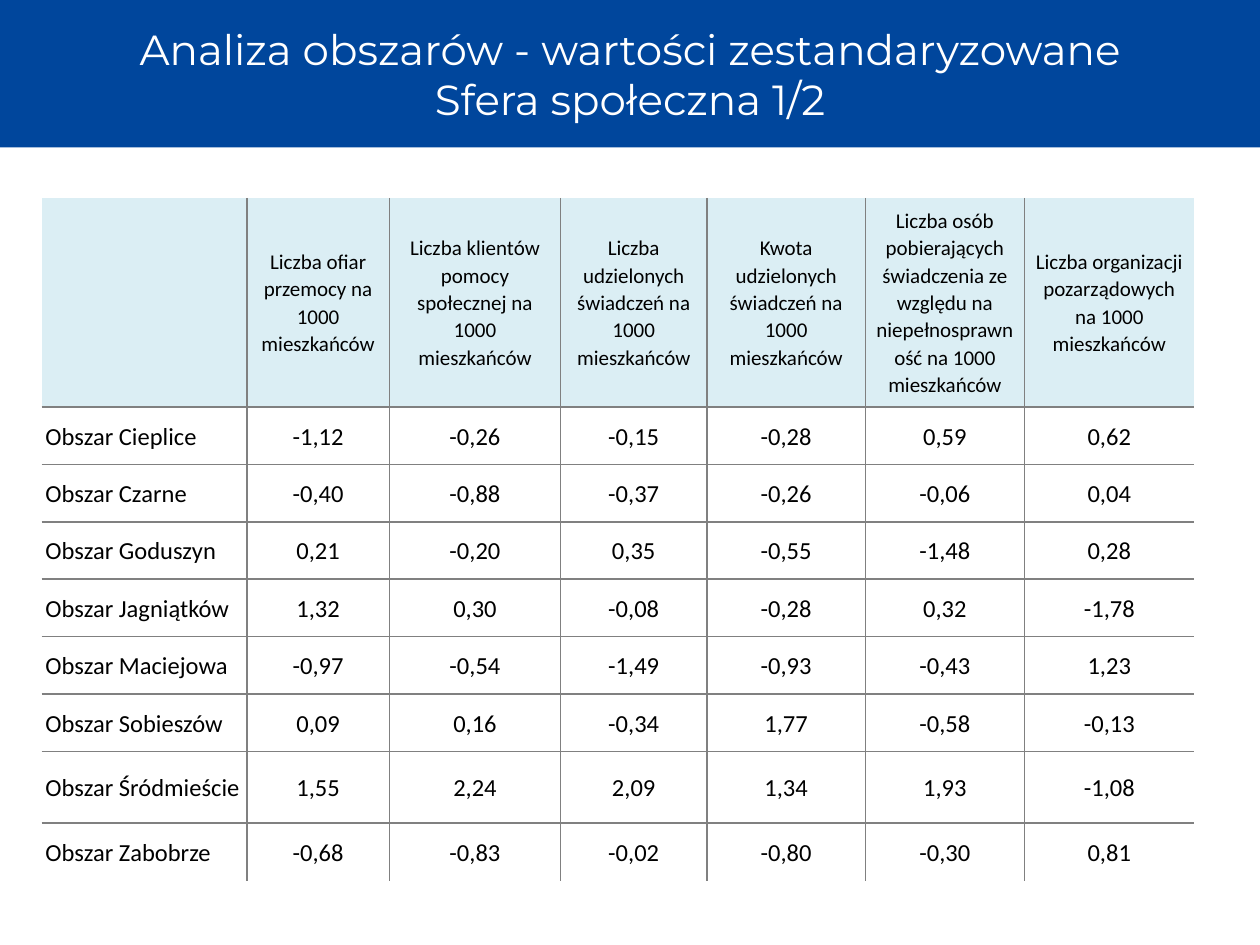
import dataclasses
import typing

import lxml.etree
import pptx
import pptx.dml.color
import pptx.enum.text
import pptx.oxml.ns
import pptx.util

Inches = pptx.util.Inches
Pt = pptx.util.Pt
RGB = pptx.dml.color.RGBColor
ALIGN = pptx.enum.text.PP_ALIGN
MIDDLE = pptx.enum.text.MSO_ANCHOR.MIDDLE


@dataclasses.dataclass(frozen=True)
class Theme:
    banner: str = "00469C"
    header: str = "DBEEF4"
    body: str = "FFFFFF"
    title_text: str = "FFFFFF"
    text: str = "000000"
    grid: str = "808080"
    title_font: str = "Montserrat"
    font: str = "Calibri"
    title_size: int = 24
    header_size: int = 12
    body_size: int = 14
    grid_width: int = 1
    line_spacing: float = 1.07


@dataclasses.dataclass(frozen=True)
class Area:
    name: str
    values: str

    def texts(self) -> list[str]:
        return [f"Obszar {self.name}", *self.values.split()]


@dataclasses.dataclass(frozen=True)
class CellStyle:
    size: int
    fill: str | None
    align: typing.Any = ALIGN.CENTER
    inset: float = 0.05


THEME = Theme()
HEADER = CellStyle(THEME.header_size, THEME.header)
LABEL = CellStyle(THEME.body_size, None, ALIGN.LEFT, 0.03)
VALUE = CellStyle(THEME.body_size, THEME.body)

TITLE = ("Analiza obszarów - wartości zestandaryzowane", "Sfera społeczna 1/2")
INDICATORS = (
    "Liczba ofiar przemocy",
    "Liczba klientów pomocy społecznej",
    "Liczba udzielonych świadczeń",
    "Kwota udzielonych świadczeń",
    "Liczba osób pobierających świadczenia ze względu na niepełnosprawność",
    "Liczba organizacji pozarządowych",
)
AREAS = (
    Area("Cieplice", "-1,12 -0,26 -0,15 -0,28 0,59 0,62"),
    Area("Czarne", "-0,40 -0,88 -0,37 -0,26 -0,06 0,04"),
    Area("Goduszyn", "0,21 -0,20 0,35 -0,55 -1,48 0,28"),
    Area("Jagniątków", "1,32 0,30 -0,08 -0,28 0,32 -1,78"),
    Area("Maciejowa", "-0,97 -0,54 -1,49 -0,93 -0,43 1,23"),
    Area("Sobieszów", "0,09 0,16 -0,34 1,77 -0,58 -0,13"),
    Area("Śródmieście", "1,55 2,24 2,09 1,34 1,93 -1,08"),
    Area("Zabobrze", "-0,68 -0,83 -0,02 -0,80 -0,30 0,81"),
)
COL_WIDTHS = (1.63, 1.13, 1.36, 1.16, 1.26, 1.26, 1.35)
TABLE_HEIGHT = 5.42
HEADER_HEIGHT = 1.66
TALL_ROWS = {"Śródmieście": 0.57}


def set_attrs(target: typing.Any, values: dict[str, typing.Any]) -> None:
    for name, value in values.items():
        setattr(target, name, value)


def add_run(p: typing.Any, text: str, font: str, size: int, color: str) -> None:
    r = p.add_run()
    r.text = text
    set_attrs(r.font, {"name": font, "size": Pt(size), "bold": False})
    r.font.color.rgb = RGB.from_string(color)


def draw_title(sp: typing.Any) -> None:
    set_attrs(sp, {"left": 0, "top": 0, "width": Inches(10), "height": Inches(1.17)})
    sp.fill.solid()
    sp.fill.fore_color.rgb = RGB.from_string(THEME.banner)
    tf = sp.text_frame
    set_attrs(tf, {"word_wrap": True, "vertical_anchor": MIDDLE,
                   "auto_size": pptx.enum.text.MSO_AUTO_SIZE.NONE})
    p = tf.paragraphs[0]
    p.alignment = ALIGN.CENTER
    for i, line in enumerate(TITLE):
        if i:
            p.add_line_break()
        add_run(p, line, THEME.title_font, THEME.title_size, THEME.title_text)


def draw_borders(cell: typing.Any, sides: dict[str, bool]) -> None:
    qn = pptx.oxml.ns.qn
    props = cell._tc.get_or_add_tcPr()
    for side, shown in sides.items():
        ln = lxml.etree.SubElement(props, qn(f"a:ln{side}"), w=str(Pt(THEME.grid_width)))
        if shown:
            fill = lxml.etree.SubElement(ln, qn("a:solidFill"))
            lxml.etree.SubElement(fill, qn("a:srgbClr"), val=THEME.grid)
        else:
            lxml.etree.SubElement(ln, qn("a:noFill"))


def draw_cell(cell: typing.Any, text: str, style: CellStyle, sides: dict[str, bool]) -> None:
    draw_borders(cell, sides)
    if style.fill:
        cell.fill.solid()
        cell.fill.fore_color.rgb = RGB.from_string(style.fill)
    else:
        cell.fill.background()
    set_attrs(cell, {"vertical_anchor": MIDDLE, "margin_left": Inches(style.inset),
                     "margin_right": Inches(style.inset), "margin_top": 0, "margin_bottom": 0})
    p = cell.text_frame.paragraphs[0]
    set_attrs(p, {"alignment": style.align, "line_spacing": THEME.line_spacing})
    if text:
        add_run(p, text, THEME.font, style.size, THEME.text)


def draw_table(s: typing.Any) -> None:
    rows = [["", *(f"{name} na 1000 mieszkańców" for name in INDICATORS)]]
    rows += [area.texts() for area in AREAS]
    last_row, last_col = len(rows) - 1, len(COL_WIDTHS) - 1
    frame = s.shapes.add_table(len(rows), len(COL_WIDTHS), Inches(0.33), Inches(1.57),
                               Inches(sum(COL_WIDTHS)), Inches(TABLE_HEIGHT))
    table = frame.table
    set_attrs(table, {"first_row": False, "horz_banding": False})
    for col, width in zip(table.columns, COL_WIDTHS):
        col.width = Inches(width)
    spare = TABLE_HEIGHT - HEADER_HEIGHT - sum(TALL_ROWS.values())
    row_height = spare / (len(AREAS) - len(TALL_ROWS))
    heights = [HEADER_HEIGHT, *(TALL_ROWS.get(area.name, row_height) for area in AREAS)]
    for i, (texts, height) in enumerate(zip(rows, heights)):
        table.rows[i].height = Inches(height)
        for j, text in enumerate(texts):
            style = HEADER if i == 0 else LABEL if j == 0 else VALUE
            sides = {"L": j > 0, "R": j < last_col, "T": i > 0, "B": i < last_row}
            draw_cell(table.cell(i, j), text, style, sides)


def main() -> None:
    prs = pptx.Presentation()
    set_attrs(prs, {"slide_width": Inches(10), "slide_height": Inches(7.5)})
    s = prs.slides.add_slide(prs.slide_layouts[5])
    draw_title(s.shapes.title)
    draw_table(s)
    prs.save("out.pptx")


if __name__ == "__main__":
    main()
